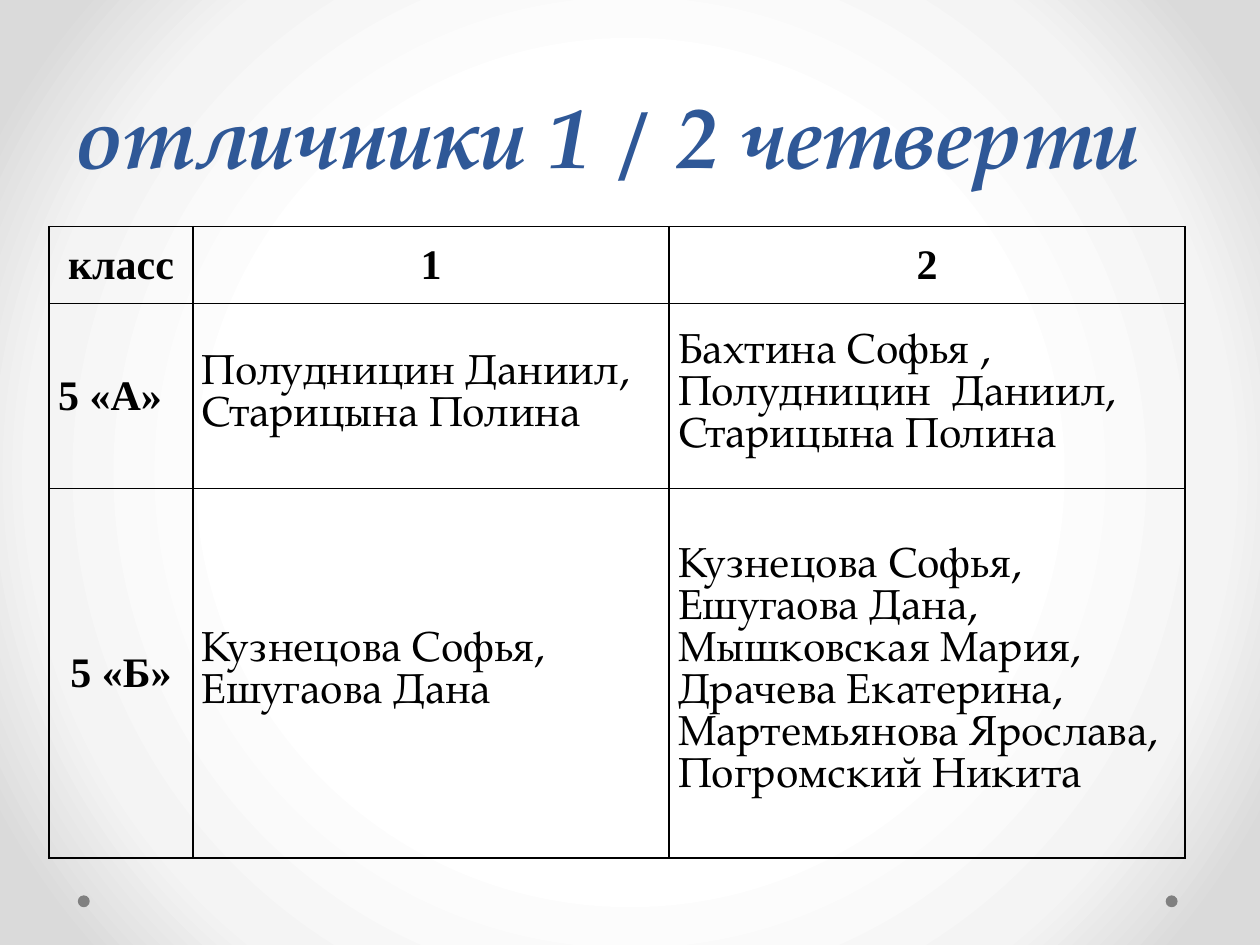
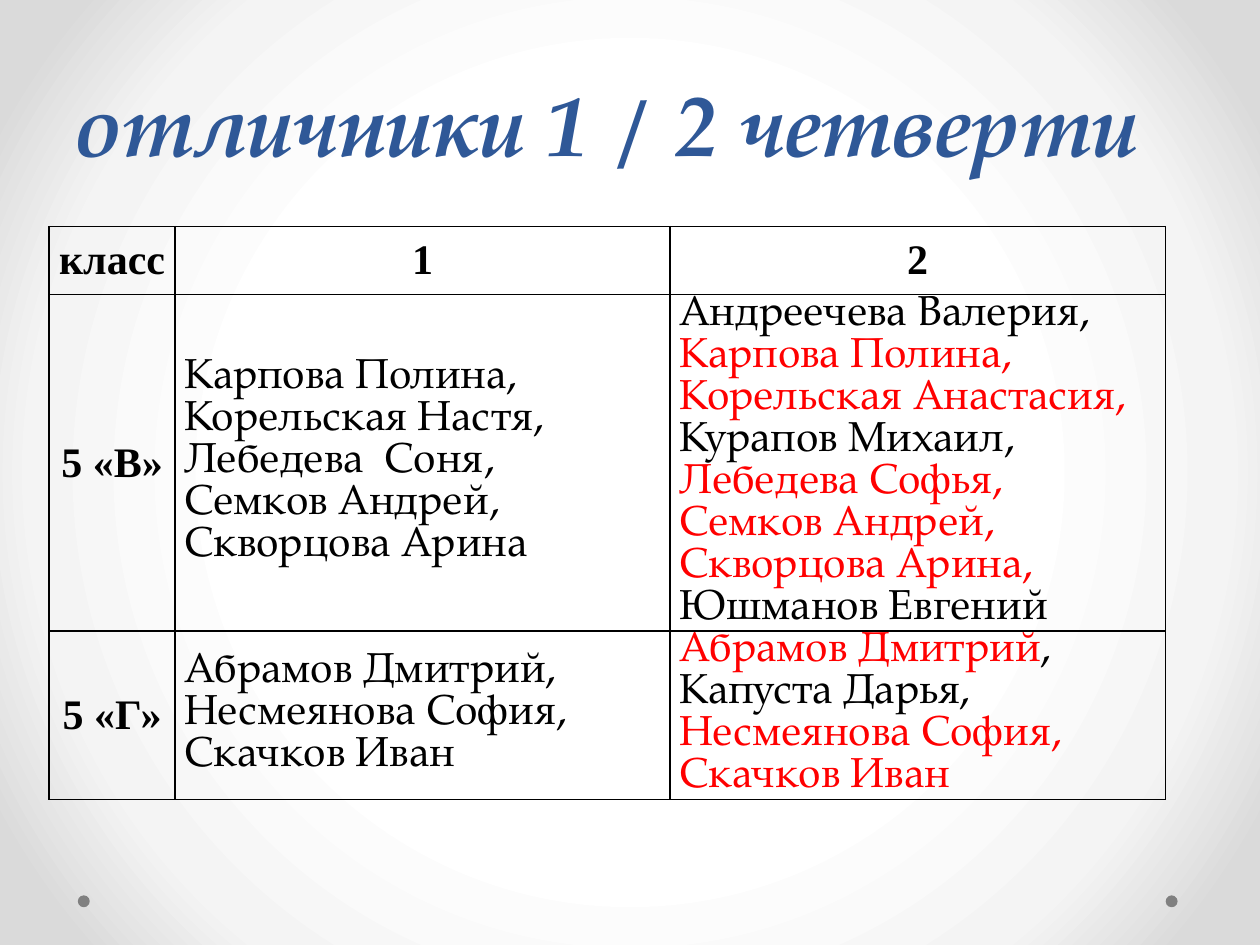
"""Build two slides that list the top pupils of each class by quarter."""
from pptx import Presentation, dml, oxml
from pptx import util as u
from pptx.dml import color
from pptx.enum import shapes, text
from pptx.oxml import ns

SERIF = "TeX Gyre Pagella"
LABEL = "Times New Roman"
BLACK, RED, BLUE, GREY = "000000", "FF0000", "2F5897", "808080"
GLOW = [(50, "FFFFFF"), (76, "F4F4F4"), (92, "DADADA")]
TITLE = "отличники 1 / 2 четверти"
HEADER = ["класс", "1", "2"]
CENTER, LEFT = text.PP_ALIGN.CENTER, text.PP_ALIGN.LEFT


def rgb(code):
    return color.RGBColor.from_string(code)


def style(span, font, size, code, bold=False, italic=False):
    span.font.name = font
    span.font.size = u.Pt(size)
    span.font.color.rgb = rgb(code)
    span.font.bold = bold
    span.font.italic = italic


# In the names, text between bars is red.
SLIDES = [
    {
        "title": (1.3, 0.74, 22.86, 3),
        "columns": [2.9, 9.6, 10.4],
        "rows": [1.55, 3.73, 7.45],
        "left_labels": ["5 «А»"],
        "classes": [
            ["5 «А»", "Полудницин Даниил, Старицына Полина",
             "Бахтина Софья , Полудницин  Даниил, Старицына Полина"],
            ["5 «Б»", "Кузнецова Софья, Ешугаова Дана",
             "Кузнецова Софья, Ешугаова Дана, Мышковская Мария, Драчева Екатерина, "
             "Мартемьянова Ярослава, Погромский Никита"],
        ],
    },
    {
        "title": (1.27, 1.12, 22.86, 2.39),
        "columns": [2.54, 9.98, 9.98],
        "rows": [1.37, 6.78, 3.4],
        "left_labels": [],
        "classes": [
            ["5 «В»", "Карпова Полина, Корельская Настя, Лебедева  Соня,\n"
             "Семков Андрей, Скворцова Арина",
             "Андреечева Валерия, |Карпова Полина, Корельская Анастасия, |Курапов Михаил, "
             "|Лебедева Софья, Семков Андрей, Скворцова Арина, |Юшманов Евгений"],
            ["5 «Г»", "Абрамов Дмитрий, Несмеянова София,\nСкачков Иван",
             "|Абрамов Дмитрий|, Капуста Дарья, |Несмеянова София, Скачков Иван"],
        ],
    },
]

deck = Presentation()
deck.slide_width, deck.slide_height = u.Cm(25.4), u.Cm(19.05)

master = deck.slide_master
master.background.fill.gradient()
gradient = master.element.find(".//" + ns.qn("a:gradFill"))
stops = "".join(
    f'<a:gs pos="{position * 1000}"><a:srgbClr val="{code}"/></a:gs>' for position, code in GLOW
)
gradient.getparent().replace(gradient, oxml.parse_xml(
    f'<a:gradFill {ns.nsdecls("a")} rotWithShape="1"><a:gsLst>{stops}</a:gsLst>'
    '<a:path path="circle"><a:fillToRect l="50000" t="50000" r="50000" b="50000"/></a:path>'
    '</a:gradFill>'
))

for content in SLIDES:
    page = deck.slides.add_slide(deck.slide_layouts[6])

    for left in (23.5, 1.57):
        dot = page.shapes.add_shape(
            shapes.MSO_SHAPE.OVAL, u.Cm(left), u.Cm(18.05), u.Cm(0.24), u.Cm(0.24))
        dot.shadow.inherit = False
        dot.fill.solid()
        dot.fill.fore_color.rgb = rgb(GREY)
        dot.line.fill.background()

    box = page.shapes.add_textbox(*[u.Cm(length) for length in content["title"]])
    frame = box.text_frame
    frame.word_wrap = True
    frame.vertical_anchor = text.MSO_ANCHOR.BOTTOM
    frame.margin_bottom = 0
    frame.text = TITLE
    frame.paragraphs[0].line_spacing = u.Pt(58)
    style(frame.paragraphs[0].runs[0], SERIF, 49, BLUE, bold=True, italic=True)

    columns, rows = content["columns"], content["rows"]
    table = page.shapes.add_table(
        len(rows), len(columns), u.Cm(0.99), u.Cm(4.57),
        u.Cm(sum(columns)), u.Cm(sum(rows))).table
    table.first_row = table.horz_banding = False
    for column, width in zip(table.columns, columns):
        column.width = u.Cm(width)
    for row, height in zip(table.rows, rows):
        row.height = u.Cm(height)

    for row_index, entries in enumerate([HEADER] + content["classes"]):
        for column_index, entry in enumerate(entries):
            cell = table.cell(row_index, column_index)
            cell.vertical_anchor = text.MSO_ANCHOR.MIDDLE
            cell.margin_left = cell.margin_right = u.Cm(0.18)
            cell.margin_top = cell.margin_bottom = 0
            properties = cell._tc.get_or_add_tcPr()
            for side in "LRTB":
                properties.append(oxml.parse_xml(
                    f'<a:ln{side} {ns.nsdecls("a")} w="{u.Pt(1)}"><a:solidFill>'
                    f'<a:srgbClr val="{BLACK}"/></a:solidFill></a:ln{side}>'))
            cell.fill.background()

            is_label = row_index == 0 or column_index == 0
            centered = is_label and entry not in content["left_labels"]
            cell.text = entry.replace("|", "")
            for para, line in zip(cell.text_frame.paragraphs, entry.split("\n")):
                para.alignment = CENTER if centered else LEFT
                if not is_label:
                    para.line_spacing = u.Pt(24)
                para.clear()
                for part_index, part in enumerate(line.split("|")):
                    if part:
                        span = para.add_run()
                        span.text = part
                        style(span, LABEL if is_label else SERIF, 24,
                              RED if part_index % 2 else BLACK, bold=is_label)

deck.save("out.pptx")
